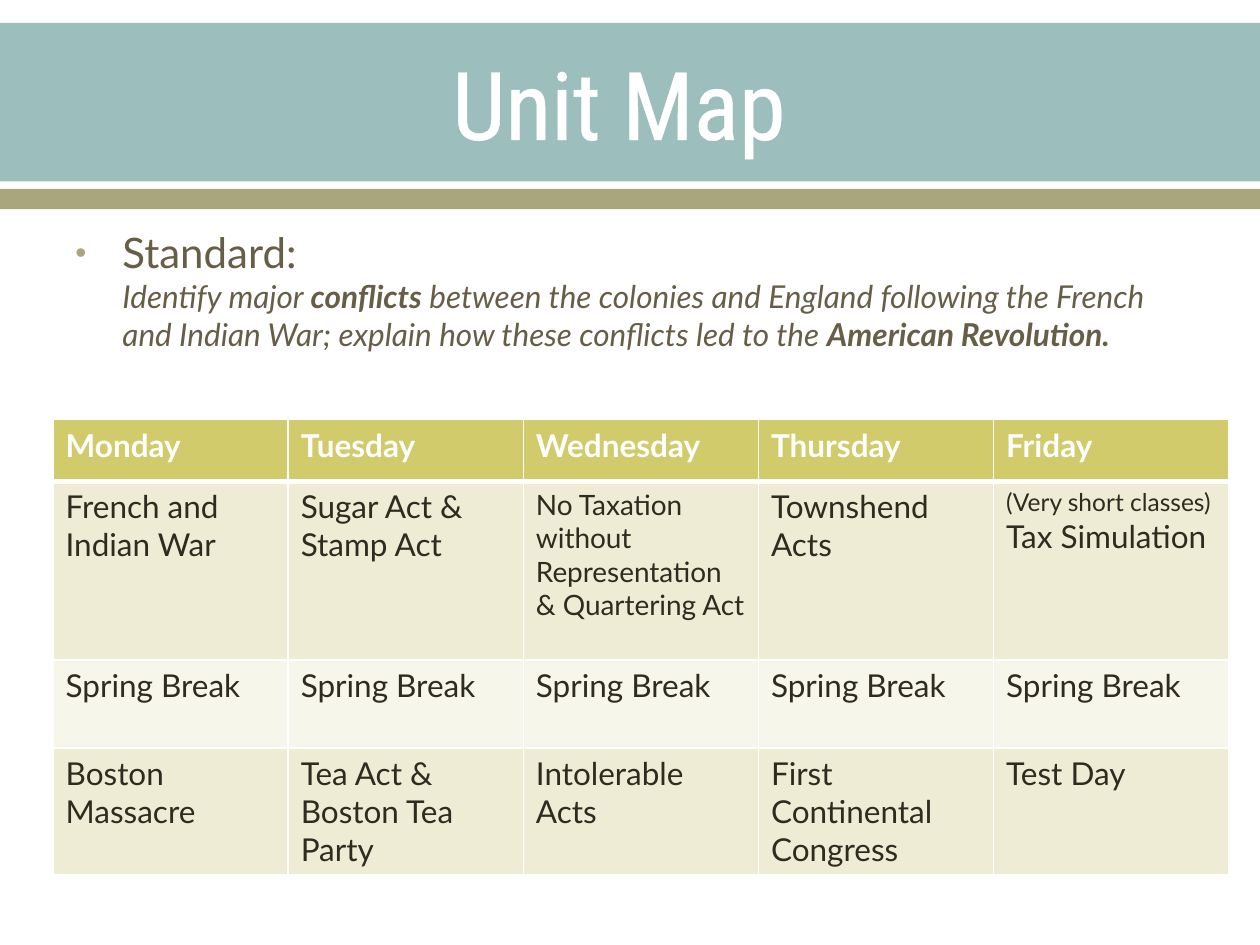
from lxml.etree import SubElement
from pptx import Presentation
from pptx.dml.color import RGBColor
from pptx.enum.shapes import MSO_SHAPE
from pptx.enum.text import MSO_ANCHOR, PP_ALIGN
from pptx.oxml.ns import qn
from pptx.util import Cm, Pt

HUES = {
    "white": "FFFFFF", "teal": "9CBEBD", "khaki": "A9A57C", "brown": "675E47",
    "ink": "2F2B20", "head": "D2CB6C", "dark": "EEECD4", "light": "F7F6EB",
}
BREAK = "Spring Break"
DAYS = ["Monday", "Tuesday", "Wednesday", "Thursday", "Friday"]
# Each cell is a list of (text, size) lines
WEEKS = [
    [[("French and Indian War", 18)], [("Sugar Act & Stamp Act", 18)],
     [("No Taxation without Representation & Quartering Act", 16)],
     [("Townshend Acts", 18)],
     [("(Very short classes)", 14), ("Tax Simulation", 18)]],
    [[(BREAK, 18)]] * 5,
    [[(text, 18)] for text in (
        "Boston Massacre", "Tea Act & Boston Tea Party", "Intolerable Acts",
        "First Continental Congress", "Test Day")],
]


def color(name):
    return RGBColor.from_string(HUES[name])


def add_run(para, text, size, hue, face="Lato", bold=False, slant=False):
    run = para.add_run()
    run.text = text
    font = run.font
    font.name, font.size = face, Pt(size)
    font.bold, font.italic = bold, slant
    font.color.rgb = color(hue)
    return run


def add_line(props, tag, hue, width):
    line = SubElement(props, qn(tag), w=str(Pt(width)))
    fill = SubElement(line, qn("a:solidFill"))
    SubElement(fill, qn("a:srgbClr"), val=HUES[hue])
    return line


def add_band(slide, left, top, width, height, hue):
    band = slide.shapes.add_shape(
        MSO_SHAPE.RECTANGLE, Cm(left), Cm(top), Cm(width), Cm(height))
    band.shadow.inherit = False
    band.fill.solid()
    band.fill.fore_color.rgb = color(hue)
    band.line.fill.background()


def add_text(slide, left, top, width, height):
    box = slide.shapes.add_textbox(Cm(left), Cm(top), Cm(width), Cm(height))
    box.text_frame.word_wrap = True
    return box.text_frame


def add_header(slide, left, top, width, height):
    # Wide band, then a thin stripe under a narrow gap
    add_band(slide, left, top, width, 3.2, "teal")
    add_band(slide, left, top + height - 0.41, width, 0.41, "khaki")
    # Title
    frame = add_text(slide, left + 1.27, top + 0.05, width - 2.54, 3.1)
    frame.vertical_anchor = MSO_ANCHOR.MIDDLE
    para = frame.paragraphs[0]
    para.alignment = PP_ALIGN.CENTER
    run = add_run(para, "Unit Map ", 54, "white", "Roboto Condensed")
    props = run.font._element
    props.insert(0, add_line(props, "a:ln", "white", 1.1))


def add_goal(slide, left, top, width, height):
    para = add_text(slide, left, top, width, height).paragraphs[0]
    para.space_before = Pt(4.8)
    # Bullet with a hanging indent
    props = para._p.get_or_add_pPr()
    props.set("marL", str(Cm(0.95)))
    props.set("indent", str(-Cm(0.95)))
    tint = SubElement(props, qn("a:buClr"))
    SubElement(tint, qn("a:srgbClr"), val=HUES["khaki"])
    SubElement(props, qn("a:buSzPct"), val="75000")
    SubElement(props, qn("a:buFont"), typeface="Arial")
    SubElement(props, qn("a:buChar"), char="•")
    # Wording
    add_run(para, "Standard:", 24, "brown")
    para.add_line_break()
    for text, bold in (
        ("Identify major ", False),
        ("conflicts", True),
        (" between the colonies and England following the French and Indian "
         "War; explain how these conflicts led to the ", False),
        ("American Revolution.", True),
    ):
        add_run(para, text, 18, "brown", bold=bold, slant=True)


def fill_cell(cell, lines, hue, ink, bold, top, base):
    # Borders come before the fill
    props = cell._tc.get_or_add_tcPr()
    for tag, width in (("a:lnL", 1), ("a:lnR", 1), ("a:lnT", top), ("a:lnB", base)):
        add_line(props, tag, "white", width)
    cell.fill.solid()
    cell.fill.fore_color.rgb = color(hue)
    frame = cell.text_frame
    for num, (text, size) in enumerate(lines):
        para = frame.add_paragraph() if num else frame.paragraphs[0]
        add_run(para, text, size, ink, bold=bold)


def add_plan(slide, left, top, width, height):
    rows = [[[(day, 18)] for day in DAYS]] + WEEKS
    table = slide.shapes.add_table(
        len(rows), len(DAYS), Cm(left), Cm(top), Cm(width), Cm(height)).table
    for col in table.columns:
        col.width = Cm(width / len(DAYS))
    for row, part in zip(table.rows, (0.136, 0.392, 0.194, 0.278)):
        row.height = Cm(height * part)
    for num, row in enumerate(rows):
        head = num == 0
        hue = "head" if head else "dark" if num % 2 else "light"
        for col, lines in enumerate(row):
            fill_cell(table.cell(num, col), lines, hue,
                      "white" if head else "ink", head,
                      3 if num == 1 else 1, 3 if head else 1)


def main():
    deck = Presentation()
    deck.slide_width, deck.slide_height = Cm(25.4), Cm(19.05)
    slide = deck.slides.add_slide(deck.slide_layouts[6])
    add_header(slide, 0, 0.46, 25.4, 3.76)
    add_goal(slide, 1.27, 4.45, 22.86, 12.57)
    add_plan(slide, 1.07, 8.46, 23.7, 9.17)
    deck.save("out.pptx")


if __name__ == "__main__":
    main()
